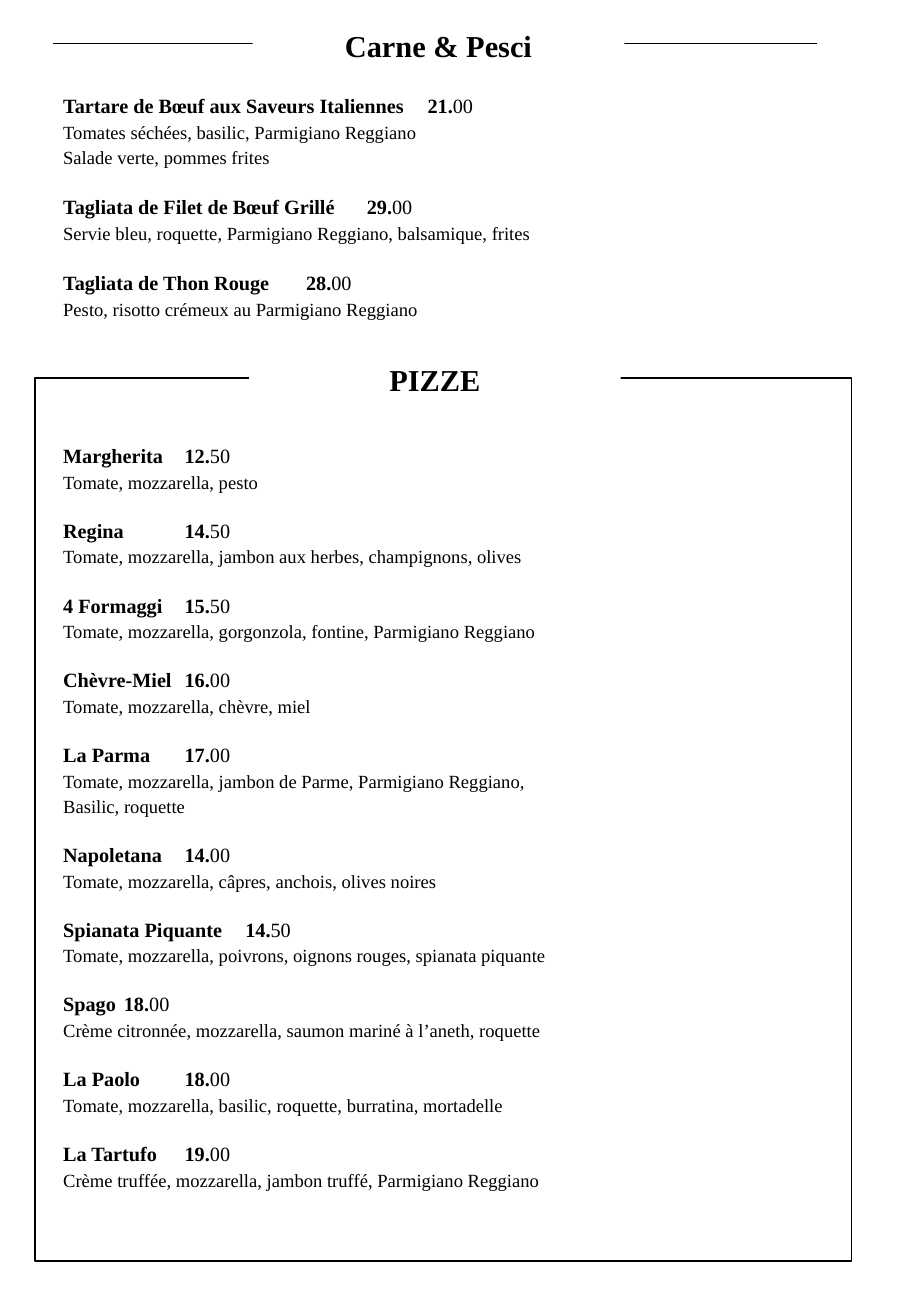
from dataclasses import dataclass
from lxml.etree import SubElement
from pptx import Presentation
from pptx.dml.color import RGBColor as Rgb
from pptx.enum.shapes import MSO_CONNECTOR as Conn, MSO_SHAPE as Kind
from pptx.enum.text import MSO_ANCHOR as Anchor, MSO_AUTO_SIZE as Fit, PP_ALIGN as Align
from pptx.oxml.ns import qn
from pptx.util import Pt

PX = 9144  # 100 px to the inch


@dataclass(frozen=True)
class Theme:
    ink: Rgb = Rgb(0, 0, 0)
    paper: Rgb = Rgb(255, 255, 255)
    face: str = "Times New Roman"
    head: Pt = Pt(18)
    dish: Pt = Pt(12)
    note: Pt = Pt(11)
    lead: Pt = Pt(15)
    rule: Pt = Pt(0.5)
    frame: Pt = Pt(1)


THEME = Theme()

# Each dish: name, price, lines of description
MEATS = [
    ("Tartare de Bœuf aux Saveurs Italiennes", "21.00",
     "Tomates séchées, basilic, Parmigiano Reggiano", "Salade verte, pommes frites"),
    ("Tagliata de Filet de Bœuf Grillé", "29.00",
     "Servie bleu, roquette, Parmigiano Reggiano, balsamique, frites"),
    ("Tagliata de Thon Rouge", "28.00", "Pesto, risotto crémeux au Parmigiano Reggiano"),
]
PIZZAS = [
    ("Margherita", "12.50", "Tomate, mozzarella, pesto"),
    ("Regina", "14.50", "Tomate, mozzarella, jambon aux herbes, champignons, olives"),
    ("4 Formaggi", "15.50", "Tomate, mozzarella, gorgonzola, fontine, Parmigiano Reggiano"),
    ("Chèvre-Miel", "16.00", "Tomate, mozzarella, chèvre, miel"),
    ("La Parma", "17.00",
     "Tomate, mozzarella, jambon de Parme, Parmigiano Reggiano,", "Basilic, roquette"),
    ("Napoletana", "14.00", "Tomate, mozzarella, câpres, anchois, olives noires"),
    ("Spianata Piquante", "14.50",
     "Tomate, mozzarella, poivrons, oignons rouges, spianata piquante"),
    ("Spago", "18.00", "Crème citronnée, mozzarella, saumon mariné à l’aneth, roquette"),
    ("La Paolo", "18.00", "Tomate, mozzarella, basilic, roquette, burratina, mortadelle"),
    ("La Tartufo", "19.00", "Crème truffée, mozzarella, jambon truffé, Parmigiano Reggiano"),
]


def put(item, vals):
    for key, val in vals.items():
        setattr(item, key, val)


def place(shape, x, y, w, h, top=0):
    put(shape, dict(left=x * PX, top=y * PX, width=w * PX, height=h * PX))
    put(shape.text_frame, dict(
        margin_left=0, margin_right=0, margin_top=top * PX, margin_bottom=0,
        word_wrap=True, auto_size=Fit.SHAPE_TO_FIT_TEXT, vertical_anchor=Anchor.TOP))


def write(para, text, size, bold):
    run = para.add_run()
    run.text = text
    put(run.font, dict(name=THEME.face, size=size, bold=bold))
    run.font.color.rgb = THEME.ink


def plain(para, **vals):
    put(para, dict(space_before=Pt(0), space_after=Pt(0)) | vals)
    props = para._p.get_or_add_pPr()
    put_in = dict(marL="0", indent="0")
    for key, val in put_in.items():
        props.set(key, val)
    SubElement(props, qn("a:buNone"))
    return props


def heading(shape, text, x, y):
    place(shape, x, y, 306, 30)
    shape.fill.solid()
    shape.fill.fore_color.rgb = THEME.paper
    para = shape.text_frame.paragraphs[0]
    plain(para, alignment=Align.CENTER, line_spacing=1.0)
    write(para, text, THEME.head, True)


def dishes(shape, menu, gap, stop, kind):
    frame = shape.text_frame
    for row, (name, price, *notes) in enumerate(menu):
        para = frame.add_paragraph() if row else frame.paragraphs[0]
        props = plain(para, line_spacing=THEME.lead, space_before=gap if row else Pt(0))
        tabs = SubElement(props, qn("a:tabLst"))
        SubElement(tabs, qn("a:tab"), pos=str(stop * PX), algn=kind)
        write(para, f"{name}\t{price[:-2]}", THEME.dish, True)
        write(para, price[-2:], THEME.dish, False)
        for note in notes:
            para = frame.add_paragraph()
            plain(para, line_spacing=THEME.lead)
            write(para, note, THEME.note, False)


def to_back(slide, shape):
    slide.shapes._spTree.insert(2, shape._element)


def carne(slide, head, body, x, y, w):
    # Rule behind the heading
    rule = slide.shapes.add_connector(
        Conn.STRAIGHT, x * PX, (y + 14) * PX, (x + w) * PX, (y + 14) * PX)
    rule.line.width = THEME.rule
    rule.line.color.rgb = THEME.ink
    SubElement(rule._element.spPr, qn("a:effectLst"))
    to_back(slide, rule)
    # Heading and dishes
    heading(head, "Carne & Pesci", x + 164, y)
    place(body, x + 8, y + 35, w + 17, 229, top=19)
    dishes(body, MEATS, Pt(15), 618, "r")


def pizze(slide, head, body, x, y, w, h):
    # Frame behind the heading
    frame = slide.shapes.add_shape(
        Kind.RECTANGLE, x * PX, (y + 14) * PX, w * PX, (h - 14) * PX)
    frame.shadow.inherit = False
    frame.fill.background()
    frame.line.width = THEME.frame
    frame.line.color.rgb = THEME.ink
    to_back(slide, frame)
    # Heading and dishes
    heading(head, "PIZZE", x + 176, y)
    place(body, x + 23, y + 67, w - 23, 644)
    dishes(body, PIZZAS, Pt(14.3), 598, "dec")


def main():
    deck = Presentation()
    put(deck, dict(slide_width=750 * PX, slide_height=1083 * PX))
    slide = deck.slides.add_slide(deck.slide_layouts[4])
    slots = {s.placeholder_format.idx: s for s in slide.placeholders}
    spare = slots[3]._element
    spare.getparent().remove(spare)
    carne(slide, slots[0], slots[2], 44, 22, 629)
    pizze(slide, slots[1], slots[4], 29, 297, 672, 741)
    deck.save("out.pptx")


if __name__ == "__main__":
    main()
